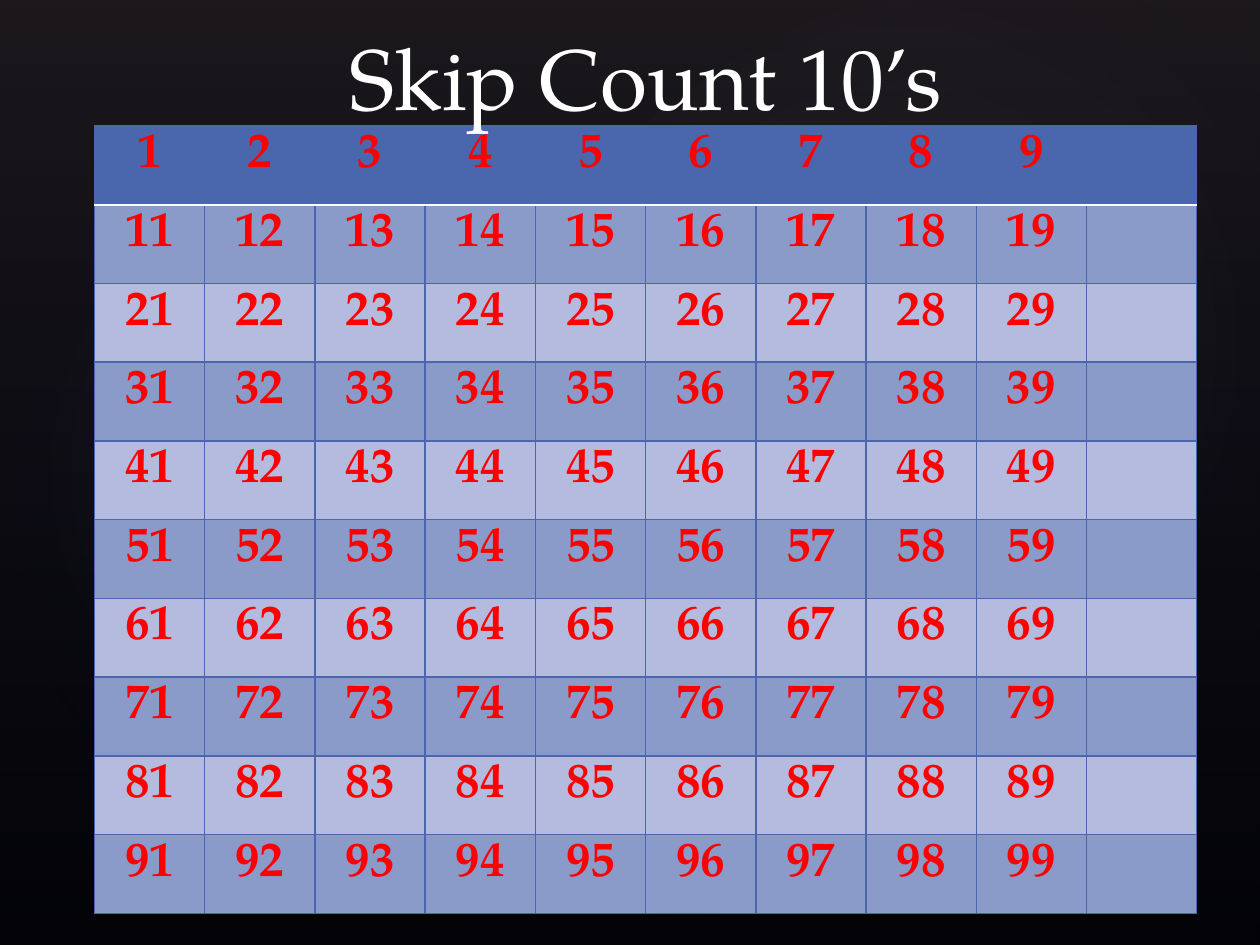
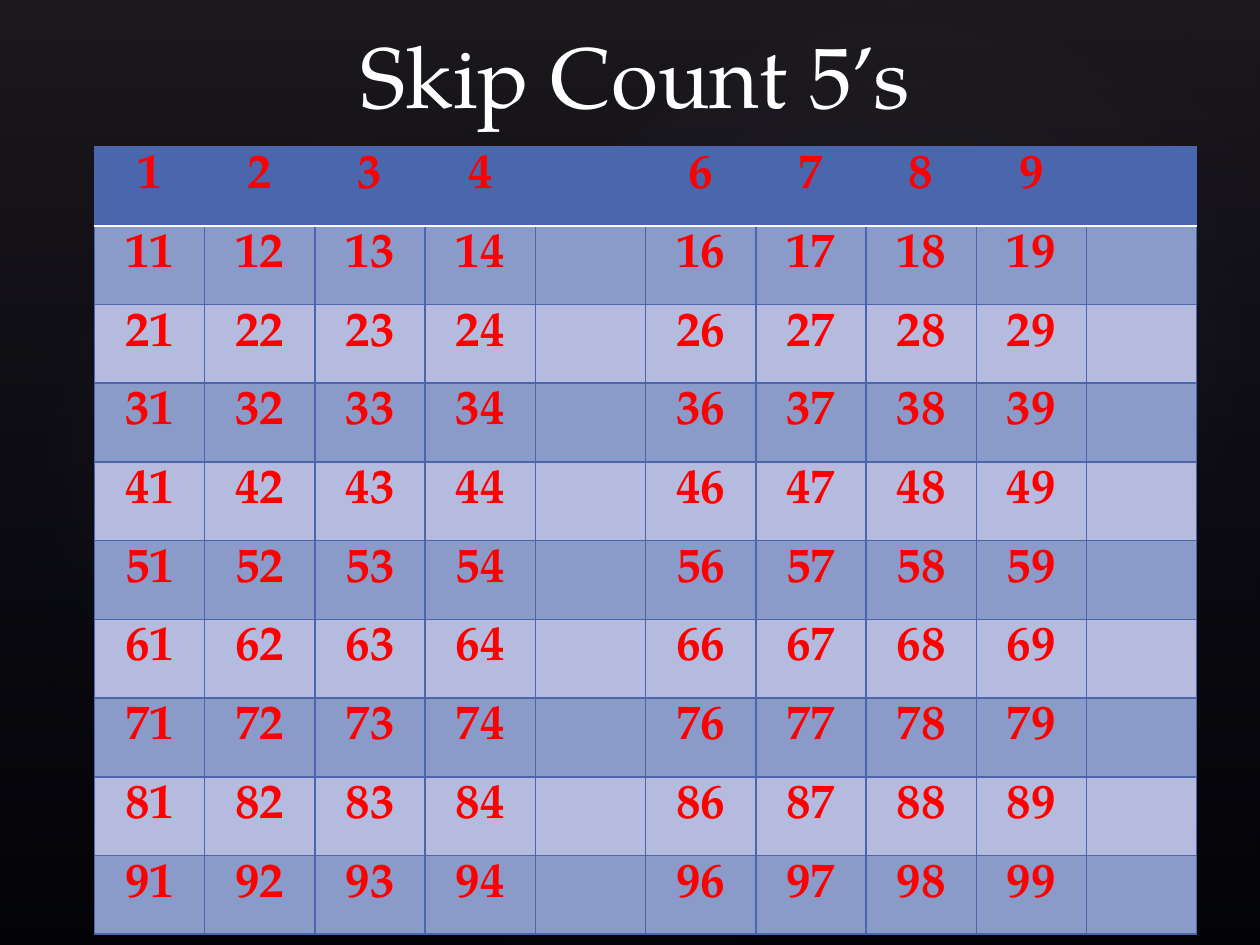
from pptx import Presentation
from pptx.dml.color import RGBColor
from pptx.enum.shapes import MSO_SHAPE
from pptx.enum.text import MSO_ANCHOR, PP_ALIGN
from pptx.oxml import parse_xml
from pptx.oxml.ns import nsdecls, qn
from pptx.util import Pt

BLACK = RGBColor(0x00, 0x00, 0x00)
WHITE = RGBColor(0xFF, 0xFF, 0xFF)
RED = RGBColor(0xFF, 0x00, 0x00)
BLUE = RGBColor(0x4A, 0x66, 0xAC)
BAND_DARK = RGBColor(0x8A, 0x9A, 0xC9)
BAND_LIGHT = RGBColor(0xB5, 0xBB, 0xDE)
NAVY = RGBColor(0x24, 0x28, 0x52)
MAUVE = RGBColor(0x50, 0x46, 0x52)
MIST = RGBColor(0xC4, 0xBC, 0xC6)

FONT = "TeX Gyre Pagella"
PAGE_WIDTH, PAGE_HEIGHT = 720, 540
GRID_SIZE = 10
LINEAR = '<a:lin ang="5400000" scaled="0"/>'
RADIAL = ('<a:path path="circle"><a:fillToRect l="50000" t="50000" '
          'r="50000" b="50000"/></a:path>')

# Soft glows: left, top, width, height, rotation, centre opacity
GLOWS = [
    (108, 82, 570, 449, 328.7, 7),
    (-21.6, 92.2, 436.3, 352.8, 294.3, 8),
    (257.8, 9.4, 510.5, 374.4, 328.7, 8),
]

# Title, title box, chart box, step of the numbers left out
SLIDES = [
    ("Skip Count 10’s", (72, 0.7, 594, 72), (54, 72, 630, 450), 10),
    ("Skip Count 5’s", (66, 0, 594, 72), (54, 84, 630, 450), 5),
]


def add_haze(page, kind, box, stops, direction, rotation=0):
    """Shape with a see-through gradient; stops are (position, colour, opacity)."""
    shape = page.shapes.add_shape(kind, *map(Pt, box))
    shape.shadow.inherit = False
    shape.rotation = rotation
    shape.line.fill.background()
    shape.fill.background()
    stop_xml = "".join(
        f'<a:gs pos="{position * 1000}"><a:srgbClr val="{color}">'
        f'<a:alpha val="{opacity * 1000}"/></a:srgbClr></a:gs>'
        for position, color, opacity in stops)
    gradient = parse_xml(f'<a:gradFill {nsdecls("a")} rotWithShape="1">'
                         f'<a:gsLst>{stop_xml}</a:gsLst>{direction}</a:gradFill>')
    properties = shape.element.spPr
    properties.replace(properties.find(qn("a:noFill")), gradient)


def add_backdrop(page, box):
    page.background.fill.solid()
    page.background.fill.fore_color.rgb = BLACK
    add_haze(page, MSO_SHAPE.RECTANGLE, box,
             [(0, MAUVE, 36), (100, NAVY, 10)], LINEAR)
    left, top = box[:2]
    for x, y, width, height, rotation, opacity in GLOWS:
        add_haze(page, MSO_SHAPE.OVAL, (left + x, top + y, width, height),
                 [(0, MIST, opacity), (58, NAVY, 0)], RADIAL, rotation)


def add_text(para, text, size, color, bold=False):
    para.alignment = PP_ALIGN.CENTER
    span = para.add_run()
    span.text = text
    span.font.name = FONT
    span.font.size = Pt(size)
    span.font.color.rgb = color
    span.font.bold = bold


def add_title(page, box, text):
    frame = page.shapes.add_textbox(*map(Pt, box)).text_frame
    frame.word_wrap = True
    frame.vertical_anchor = MSO_ANCHOR.BOTTOM
    frame.margin_top = frame.margin_bottom = 0
    add_text(frame.paragraphs[0], text, 49, WHITE)


def set_borders(cell, row):
    """Blue all round, with a white rule below the first row."""
    rule = (WHITE, 1.5)
    plain = (BLUE, 1)
    sides = [("L", plain), ("R", plain),
             ("T", rule if row == 1 else plain),
             ("B", rule if row == 0 else plain)]
    properties = cell._tc.get_or_add_tcPr()
    for index, (side, (color, width)) in enumerate(sides):
        properties.insert(index, parse_xml(
            f'<a:ln{side} {nsdecls("a")} w="{Pt(width)}"><a:solidFill>'
            f'<a:srgbClr val="{color}"/></a:solidFill></a:ln{side}>'))


def add_number_chart(page, box, step):
    """Numbers 1 to 100, leaving the multiples of step blank."""
    table = page.shapes.add_table(GRID_SIZE, GRID_SIZE, *map(Pt, box)).table
    for column in table.columns:
        column.width = Pt(box[2] / GRID_SIZE)
    for line in table.rows:
        line.height = Pt(box[3] / GRID_SIZE)
    for index, cell in enumerate(table.iter_cells()):
        row, number = index // GRID_SIZE, index + 1
        cell.fill.solid()
        if row == 0:
            cell.fill.fore_color.rgb = BLUE
        else:
            cell.fill.fore_color.rgb = BAND_DARK if row % 2 else BAND_LIGHT
        set_borders(cell, row)
        if number % step:
            add_text(cell.text_frame.paragraphs[0], str(number), 28, RED, True)


def main():
    deck = Presentation()
    deck.slide_width, deck.slide_height = Pt(PAGE_WIDTH), Pt(PAGE_HEIGHT)
    for title, title_box, chart_box, step in SLIDES:
        page = deck.slides.add_slide(deck.slide_layouts[6])
        add_backdrop(page, (0, 0, PAGE_WIDTH, PAGE_HEIGHT))
        add_number_chart(page, chart_box, step)
        add_title(page, title_box, title)
    deck.save("out.pptx")


if __name__ == "__main__":
    main()
